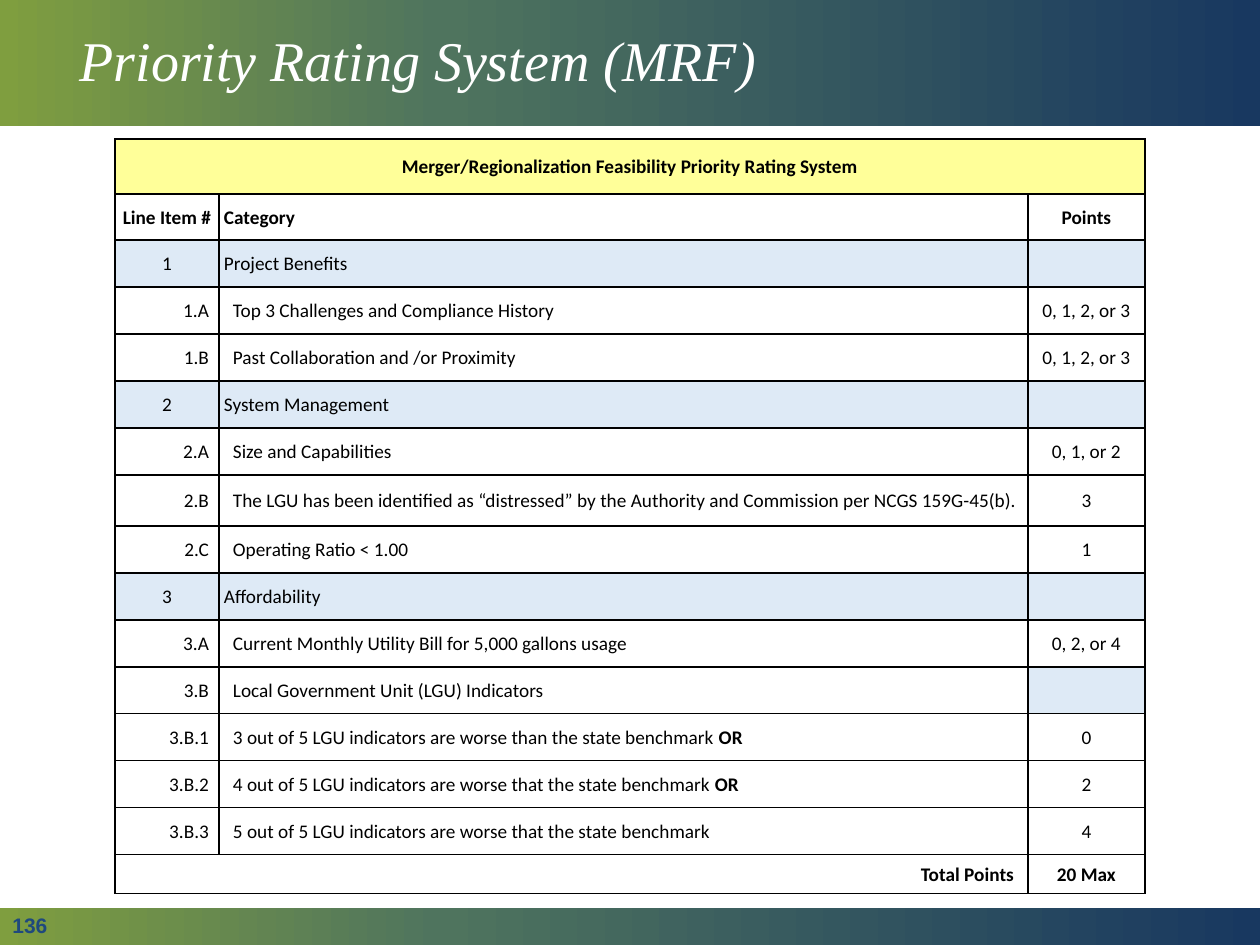
from copy import deepcopy

from lxml import etree
from pptx import Presentation
from pptx import util as u
from pptx.dml.color import RGBColor
from pptx.enum import shapes, text
from pptx.oxml.ns import qn

TITLE = "Priority Rating System (MRF)"
PAGE_NUMBER = "136"
TABLE_TITLE = "Merger/Regionalization Feasibility Priority Rating System"
HEADINGS = ("Line Item #", "Category", "Points")
# Line item, category, points; a whole number marks a section
ITEMS = [
    ("1", "Project Benefits", ""),
    ("1.A", "Top 3 Challenges and Compliance History", "0, 1, 2, or 3"),
    ("1.B", "Past Collaboration and /or Proximity", "0, 1, 2, or 3"),
    ("2", "System Management", ""),
    ("2.A", "Size and Capabilities", "0, 1, or 2"),
    ("2.B", "The LGU has been identified as “distressed” by the Authority "
            "and Commission per NCGS 159G-45(b).", "3"),
    ("2.C", "Operating Ratio < 1.00", "1"),
    ("3", "Affordability", ""),
    ("3.A", "Current Monthly Utility Bill for 5,000 gallons usage", "0, 2, or 4"),
    ("3.B", "Local Government Unit (LGU) Indicators", ""),
    ("3.B.1", "3 out of 5 LGU indicators are worse than the state benchmark OR", "0"),
    ("3.B.2", "4 out of 5 LGU indicators are worse that the state benchmark OR", "2"),
    ("3.B.3", "5 out of 5 LGU indicators are worse that the state benchmark", "4"),
]
TOTAL = ("", "Total Points", "20 Max")

COLUMNS = [104, 809, 117]
ROWS = [55, 46] + [47] * 5 + [51] + [47] * 7 + [39]
GRADIENT = [(0, "7F9E3F"), (0.35, "4F745E"), (1, "183860")]
YELLOW, BLUE, WHITE, BLACK = "FFFF99", "DEEAF6", "FFFFFF", "000000"
LEFT, CENTER, RIGHT = text.PP_ALIGN.LEFT, text.PP_ALIGN.CENTER, text.PP_ALIGN.RIGHT
MIDDLE = text.MSO_ANCHOR.MIDDLE


def px(n):
    return u.Emu(round(n * 914400 / 126))


def rgb(color):
    return RGBColor.from_string(color)


def set_font(p, name, size, color, bold=False, italic=False):
    f = p.font
    f.name, f.size, f.bold, f.italic = name, u.Pt(size), bold, italic
    f.color.rgb = rgb(color)


def add_band(s, top, height):
    sp = s.shapes.add_shape(shapes.MSO_SHAPE.RECTANGLE, 0, px(top), px(1260), px(height))
    sp.shadow.inherit = False
    sp.line.fill.background()
    sp.fill.gradient()
    sp.fill.gradient_angle = 0
    stop_list = next(sp._element.iter(qn("a:gsLst")))
    stop_list.append(deepcopy(stop_list[0]))
    for stop, (position, color) in zip(sp.fill.gradient_stops, GRADIENT):
        stop.position = position
        stop.color.rgb = rgb(color)


def set_borders(cell, sides):
    tcPr = cell._tc.get_or_add_tcPr()
    for side in "LRTB":
        ln = etree.SubElement(tcPr, qn(f"a:ln{side}"), w=str(u.Pt(1)))
        if side in sides:
            fill = etree.SubElement(ln, qn("a:solidFill"))
            etree.SubElement(fill, qn("a:srgbClr"), val=BLACK)
        else:
            etree.SubElement(ln, qn("a:noFill"))


def fill_cell(cell, words, align=CENTER, fill=WHITE, bold=False,
              left=1, right=1, sides="LRTB"):
    set_borders(cell, sides)
    cell.fill.solid()
    cell.fill.fore_color.rgb = rgb(fill)
    cell.vertical_anchor = MIDDLE
    cell.margin_left, cell.margin_right = px(left), px(right)
    cell.margin_top, cell.margin_bottom = px(1), 0
    p = cell.text_frame.paragraphs[0]
    p.alignment = align
    set_font(p, "Calibri", 11, BLACK, bold)
    if words.endswith(" OR"):
        p.add_run().text = words[:-2]
        r = p.add_run()
        r.text, r.font.bold = "OR", True
    elif words:
        p.add_run().text = words


prs = Presentation()
prs.slide_width, prs.slide_height = px(1260), px(945)
s = prs.slides.add_slide(prs.slide_layouts[5])

# Gradient bands
add_band(s, 908, 37)
add_band(s, 0, 126)

# Title, in front of the top band
title = s.shapes.title
title.left, title.top, title.width, title.height = px(67), 0, px(1147), px(126)
title._element.getparent().append(title._element)
title.text_frame.text = TITLE
title.text_frame.vertical_anchor = MIDDLE
p = title.text_frame.paragraphs[0]
p.alignment, p.line_spacing = LEFT, 0.9
set_font(p, "Times New Roman", 32, WHITE, italic=True)

# Page number
tf = s.shapes.add_textbox(0, px(916), px(284), px(19)).text_frame
tf.word_wrap = True
tf.vertical_anchor = MIDDLE
tf.text = PAGE_NUMBER
set_font(tf.paragraphs[0], "Arial", 12, "1F497D", bold=True)

# Rating table
table = s.shapes.add_table(len(ROWS), len(COLUMNS), px(115), px(139),
                           px(sum(COLUMNS)), px(sum(ROWS))).table
table.first_row = table.horz_banding = False
for column, width in zip(table.columns, COLUMNS):
    column.width = px(width)
for row, height in zip(table.rows, ROWS):
    row.height = px(height)

# Table title and headings
for c, words in enumerate((TABLE_TITLE, "", "")):
    fill_cell(table.cell(0, c), words, fill=YELLOW, bold=True)
table.cell(0, 0).merge(table.cell(0, 2))
for c, (words, align, left) in enumerate(zip(HEADINGS, (CENTER, LEFT, CENTER), (1, 5, 1))):
    fill_cell(table.cell(1, c), words, align, bold=True, left=left)

# Sections and their items
for i, (number, category, points) in enumerate(ITEMS, start=2):
    section = number.isdigit()
    fill = BLUE if section else WHITE
    fill_cell(table.cell(i, 0), number, CENTER if section else RIGHT, fill,
              right=1 if section else 10)
    fill_cell(table.cell(i, 1), category, LEFT, fill, left=5 if section else 14)
    fill_cell(table.cell(i, 2), points, fill=WHITE if points else BLUE)

# Total row, open between its first two cells
last = len(ROWS) - 1
for c, (align, right, sides) in enumerate([(CENTER, 1, "LTB"), (RIGHT, 14, "RTB"),
                                           (CENTER, 1, "LRTB")]):
    fill_cell(table.cell(last, c), TOTAL[c], align, bold=True, right=right, sides=sides)

prs.save("out.pptx")
